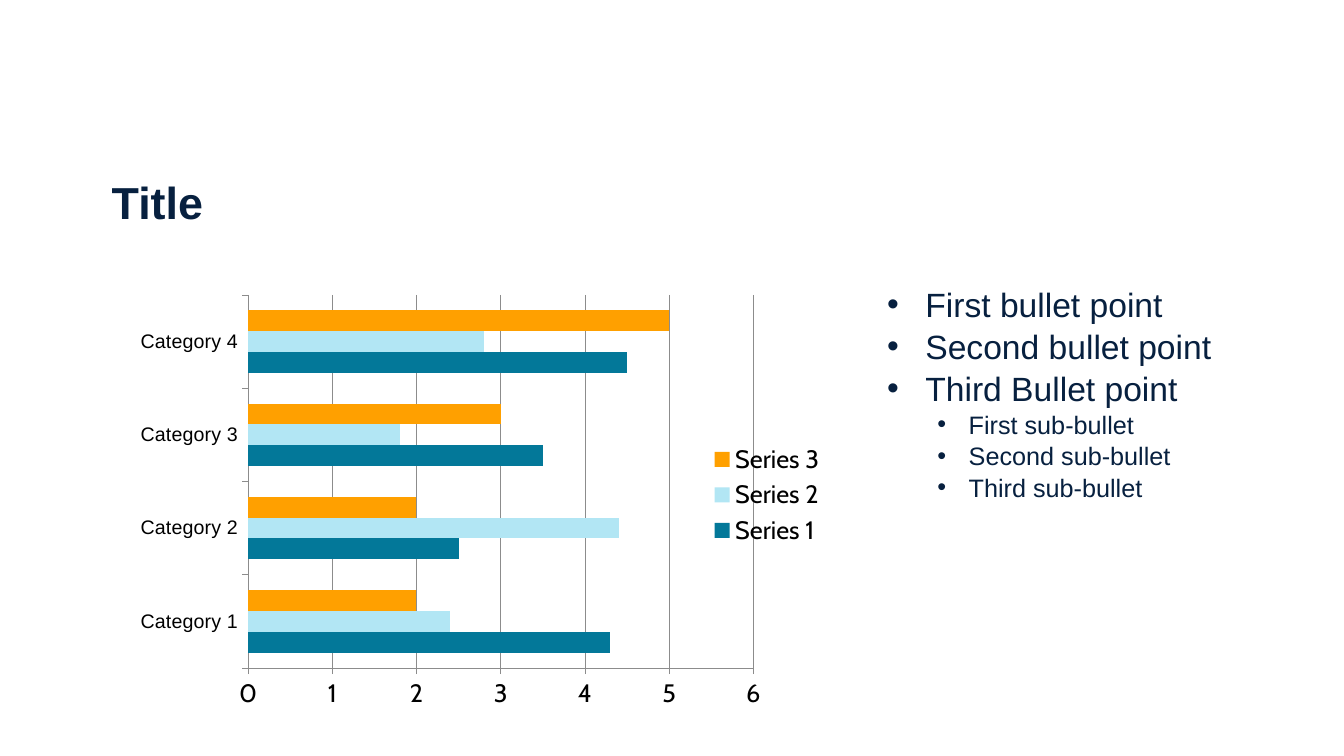
from dataclasses import dataclass

from lxml import etree
from pptx import Presentation
from pptx import util as u
from pptx.chart.data import CategoryChartData
from pptx.dml.color import RGBColor
from pptx.enum import chart as charts, text
from pptx.oxml.ns import qn

PX = 9144  # EMU per px, 100 px to the inch


@dataclass(frozen=True)
class Theme:
    ink: str = "07203F"
    black: str = "000000"
    grid: str = "8C8C8C"
    series: tuple = ("037899", "B2E6F4", "FFA000")
    body_font: str = "Arial"
    chart_font: str = "Cabin"
    title_size: int = 32
    bullet_sizes: tuple = (24, 18)
    category_size: int = 14
    chart_size: int = 18
    line_width: float = 0.5
    line_spacing: float = 1.04


THEME = Theme()

CATEGORIES = ["Category 1", "Category 2", "Category 3", "Category 4"]
SERIES = {
    "Series 1": (4.3, 2.5, 3.5, 4.5),
    "Series 2": (2.4, 4.4, 1.8, 2.8),
    "Series 3": (2, 2, 3, 5),
}
BULLETS = [
    ("First bullet point", 0),
    ("Second bullet point", 0),
    ("Third Bullet point", 0),
    ("First sub-bullet", 1),
    ("Second sub-bullet", 1),
    ("Third sub-bullet", 1),
]
INDENTS = ((38, 38), (81, 31))  # left margin and hanging part, by level
PLOT_AREA = {"x": 0.166, "y": 0.051, "w": 0.717, "h": 0.838}


def px(*lengths):
    return [length * PX for length in lengths]


def style_font(font, size, name, colour, bold=False):
    font.size = u.Pt(size)
    font.name = name
    font.bold = bold
    font.color.rgb = RGBColor.from_string(colour)


def style_line(line):
    line.color.rgb = RGBColor.from_string(THEME.grid)
    line.width = u.Pt(THEME.line_width)


def add_text_box(page, left, top, width, height):
    box = page.shapes.add_textbox(*px(left, top, width, height))
    box.text_frame.word_wrap = True
    return box


def add_title(page, wording, *place):
    frame = add_text_box(page, *place).text_frame
    frame.vertical_anchor = text.MSO_ANCHOR.MIDDLE
    frame.text = wording
    span = frame.paragraphs[0].runs[0]
    style_font(span.font, THEME.title_size, THEME.body_font, THEME.ink, bold=True)


def set_bullet(para, level):
    margin, hanging = px(*INDENTS[level])
    properties = para._p.get_or_add_pPr()
    properties.set("marL", str(margin))
    properties.set("indent", str(-hanging))
    etree.SubElement(properties, qn("a:buFont")).set("typeface", THEME.body_font)
    etree.SubElement(properties, qn("a:buChar")).set("char", "•")


def add_bullets(page, items, *place):
    frame = add_text_box(page, *place).text_frame
    frame.text = "\n".join(wording for wording, level in items)
    for para, (wording, level) in zip(frame.paragraphs, items):
        para.level = level
        set_bullet(para, level)
        para.line_spacing = THEME.line_spacing
        style_font(para.runs[0].font, THEME.bullet_sizes[level],
                   THEME.body_font, THEME.ink)


def set_plot_layout(chart):
    plot_area = chart._chartSpace.chart.plotArea
    for old in plot_area.findall(qn("c:layout")):
        plot_area.remove(old)
    layout = etree.Element(qn("c:layout"))
    manual = etree.SubElement(layout, qn("c:manualLayout"))
    settings = {"layoutTarget": "inner", "xMode": "edge", "yMode": "edge", **PLOT_AREA}
    for name, value in settings.items():
        etree.SubElement(manual, qn(f"c:{name}")).set("val", str(value))
    plot_area.insert(0, layout)


def style_axis(axis, size, font_name):
    axis.major_tick_mark = charts.XL_TICK_MARK.OUTSIDE
    axis.minor_tick_mark = charts.XL_TICK_MARK.NONE
    style_font(axis.tick_labels.font, size, font_name, THEME.black)
    style_line(axis.format.line)


def add_bar_chart(page, *place):
    data = CategoryChartData()
    data.categories = CATEGORIES
    for name, values in SERIES.items():
        data.add_series(name, values)
    chart = page.shapes.add_chart(
        charts.XL_CHART_TYPE.BAR_CLUSTERED, *px(*place), data).chart
    chart.has_title = False
    style_font(chart.font, THEME.chart_size, THEME.chart_font, THEME.black)
    set_plot_layout(chart)

    # Bars
    plot = chart.plots[0]
    plot.gap_width = 150
    plot.vary_by_categories = False
    for series, colour in zip(plot.series, THEME.series):
        series.format.fill.solid()
        series.format.fill.fore_color.rgb = RGBColor.from_string(colour)

    # Axes
    style_axis(chart.category_axis, THEME.category_size, THEME.body_font)
    values = chart.value_axis
    style_axis(values, THEME.chart_size, THEME.chart_font)
    values.minimum_scale, values.maximum_scale, values.major_unit = 0, 6, 1
    values.tick_labels.number_format = "General"
    values.tick_labels.number_format_is_linked = False
    values.has_major_gridlines = True
    style_line(values.major_gridlines.format.line)

    # Legend
    chart.has_legend = True
    chart.legend.position = charts.XL_LEGEND_POSITION.RIGHT
    chart.legend.include_in_layout = False
    style_font(chart.legend.font, THEME.chart_size, THEME.chart_font, THEME.black)


def main():
    deck = Presentation()
    deck.slide_width, deck.slide_height = px(1333, 750)
    page = deck.slides.add_slide(deck.slide_layouts[6])
    add_bar_chart(page, 130, 270, 699, 442)
    add_bullets(page, BULLETS, 870, 275, 426, 295)
    add_title(page, "Title", 101, 168, 663, 64)
    deck.save("out.pptx")


if __name__ == "__main__":
    main()
